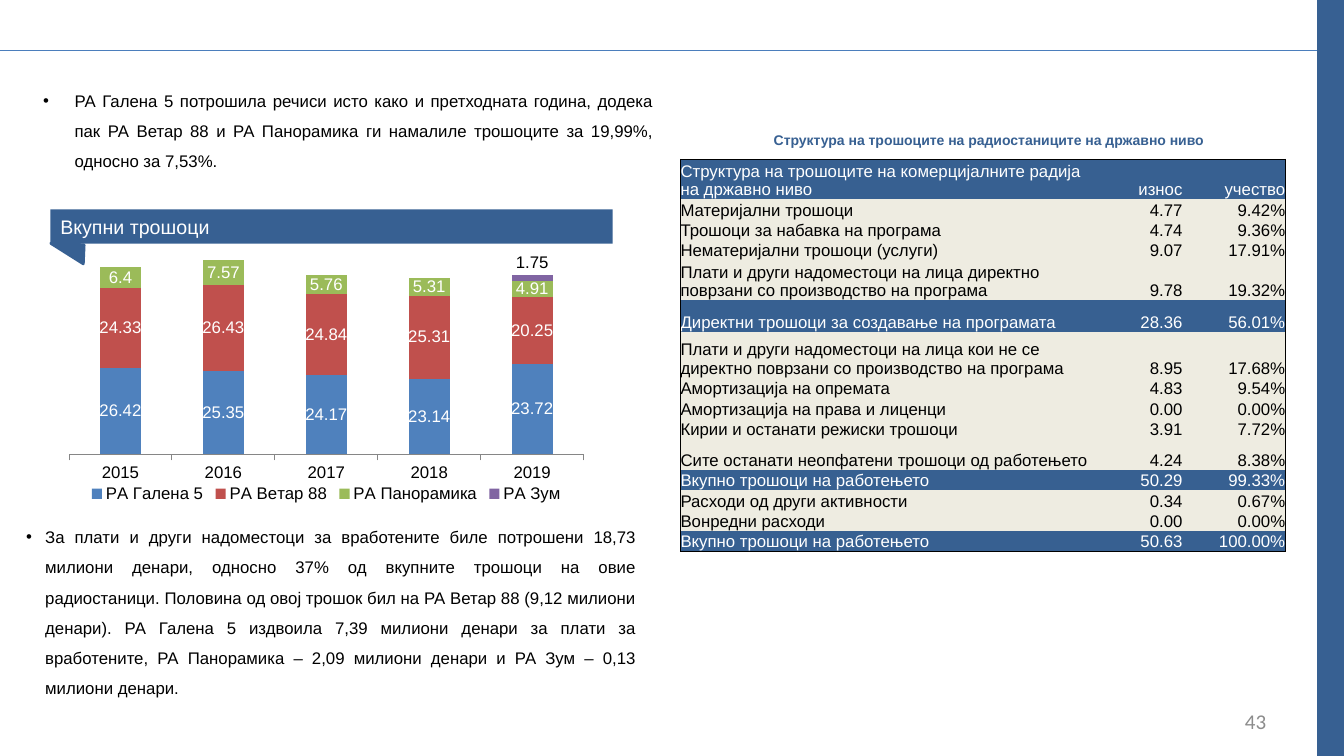
"""Build the slide on the costs of the national radio stations."""
from lxml.etree import SubElement
from pptx import Presentation
from pptx.chart.data import CategoryChartData
from pptx.dml.color import RGBColor
from pptx.enum.chart import XL_CHART_TYPE as ChartType, XL_LABEL_POSITION as LabelPosition
from pptx.enum.chart import XL_LEGEND_POSITION as LegendPosition, XL_TICK_MARK as TickMark
from pptx.enum.chart import XL_TICK_LABEL_POSITION as TickLabelPosition
from pptx.enum.shapes import MSO_CONNECTOR as Connector, MSO_SHAPE as Shape
from pptx.enum.text import MSO_ANCHOR as Anchor, PP_ALIGN as Align
from pptx.oxml import parse_xml
from pptx.oxml.ns import nsdecls, qn
from pptx.util import Cm, Pt

BLACK = RGBColor(0x00, 0x00, 0x00)
WHITE = RGBColor(0xFF, 0xFF, 0xFF)
GRAY = RGBColor(0x8C, 0x8C, 0x8C)
NAVY = RGBColor(0x37, 0x60, 0x92)
TABLE_NAVY = RGBColor(0x37, 0x60, 0x91)
CREAM = RGBColor(0xEE, 0xEC, 0xE1)
RULE_BLUE = RGBColor(0x4B, 0x7E, 0xBC)
AXIS_GRAY = RGBColor(0x86, 0x86, 0x86)
BLUE = RGBColor(0x4F, 0x81, 0xBD)
RED = RGBColor(0xC0, 0x50, 0x4D)
GREEN = RGBColor(0x9B, 0xBB, 0x59)
PURPLE = RGBColor(0x80, 0x64, 0xA2)
PLAIN_TABLE_STYLE = "{2D5ABB26-0587-4C30-8999-92F81FD0307C}"

YEARS = ["2015", "2016", "2017", "2018", "2019"]
STATIONS = [
    ("РА Галена 5", [26.42, 25.35, 24.17, 23.14, 27.72], BLUE),
    ("РА Ветар 88", [24.33, 26.43, 24.84, 25.31, 20.25], RED),
    ("РА Панорамика", [6.4, 7.57, 5.76, 5.31, 4.91], GREEN),
    ("РА Зум", [0, 0, 0, 0, 1.75], PURPLE),
]
COSTS = [
    ("Структура на трошоците на комерцијалните радија на државно ниво", "износ", "учество"),
    ("Материјални трошоци", "4.77", "9.42%"),
    ("Трошоци за набавка на програма", "4.74", "9.36%"),
    ("Нематеријални трошоци (услуги)", "9.07", "17.91%"),
    ("Плати и други надоместоци на лица директно поврзани со производство на програма",
     "9.78", "19.32%"),
    ("Директни трошоци за создавање на програмата", "28.36", "56.01%"),
    ("Плати и други надоместоци на лица кои не се директно поврзани со производство "
     "на програма", "8.95", "17.68%"),
    ("Амортизација на опремата", "4.83", "9.54%"),
    ("Амортизација на права и лиценци", "0.00", "0.00%"),
    ("Кирии и останати режиски трошоци", "3.91", "7.72%"),
    ("Сите останати неопфатени трошоци од работењето", "4.24", "8.38%"),
    ("Вкупно трошоци на работењето", "50.29", "99.33%"),
    ("Расходи од други активности", "0.34", "0.67%"),
    ("Вонредни расходи", "0.00", "0.00%"),
    ("Вкупно трошоци на работењето", "50.63", "100.00%"),
]
TOTAL_ROWS = {0, 5, 11, 14}
TALL_ROWS = {0: 0.97, 4: 0.97, 5: 0.79, 6: 1.17, 10: 0.79}
TREND_TEXT = (
    "РА Галена 5 потрошила речиси исто како и претходната година, додека пак РА Ветар 88 "
    "и РА Панорамика ги намалиле трошоците за 19,99%, односно за 7,53%.")
WAGES_TEXT = (
    "За плати и други надоместоци за вработените биле потрошени 18,73 милиони денари, "
    "односно 37% од вкупните трошоци на овие радиостаници. Половина од овој трошок бил на "
    "РА Ветар 88 (9,12 милиони денари). РА Галена 5 издвоила 7,39 милиони денари за плати "
    "за вработените, РА Панорамика – 2,09 милиони денари и РА Зум – 0,13 милиони денари.")


def manual_layout(**values):
    """Return a chart layout element with the given settings."""
    settings = "".join(f'<c:{name} val="{value}"/>' for name, value in values.items())
    return parse_xml(f'<c:layout {nsdecls("c")}><c:manualLayout>{settings}'
                     '</c:manualLayout></c:layout>')


class SlideBuilder:
    """Holds the text style and the slide, and adds each kind of element."""

    def __init__(self, slide, font="Arial", size=12):
        self.slide, self.font, self.size = slide, font, size

    def style(self, font, color=BLACK, size=None, name=None, bold=False):
        font.name, font.size, font.bold = name or self.font, Pt(size or self.size), bold
        font.color.rgb = color

    def fill_text(self, frame, text, align=Align.LEFT, **style):
        frame.text, frame.word_wrap = text, True
        paragraph = frame.paragraphs[0]
        paragraph.alignment = align
        self.style(paragraph.runs[0].font, **style)
        return paragraph

    def text(self, box, text, anchor=Anchor.TOP, **style):
        frame = self.slide.shapes.add_textbox(*map(Cm, box)).text_frame
        frame.vertical_anchor = anchor
        return self.fill_text(frame, text, **style)

    def bullet(self, box, text, indent):
        paragraph = self.text(box, text, align=Align.JUSTIFY)
        paragraph.line_spacing = 1.5
        properties = paragraph._p.get_or_add_pPr()
        properties.set("marL", str(Cm(indent)))
        properties.set("indent", str(-Cm(indent)))
        SubElement(properties, qn("a:buFont"), typeface="Arial")
        SubElement(properties, qn("a:buChar"), char="•")

    def shape(self, kind, box, outlined=True, rotation=0):
        shape = self.slide.shapes.add_shape(kind, *map(Cm, box))
        shape.shadow.inherit = False
        shape.rotation = rotation
        shape.fill.solid()
        shape.fill.fore_color.rgb = NAVY
        if outlined:
            shape.line.color.rgb, shape.line.width = NAVY, Pt(2)
        else:
            shape.line.fill.background()
        return shape

    def rule(self, y, width):
        line = self.slide.shapes.add_connector(Connector.STRAIGHT, 0, Cm(y), Cm(width), Cm(y))
        line.line.color.rgb, line.line.width = RULE_BLUE, Pt(0.75)
        SubElement(line._element.spPr, qn("a:effectLst"))

    def cost_chart(self, box):
        data = CategoryChartData()
        data.categories = YEARS
        for name, values, _ in STATIONS:
            data.add_series(name, values)
        chart = self.slide.shapes.add_chart(
            ChartType.COLUMN_STACKED, *map(Cm, box), data).chart
        self.style(chart.font)
        chart.has_title = False
        chart.has_legend = True
        chart.legend.position, chart.legend.include_in_layout = LegendPosition.BOTTOM, False
        chart.legend._element.find(qn("c:legendPos")).addnext(manual_layout(
            xMode="edge", yMode="edge", x=0.05, y=0.87, w=0.9, h=0.08))
        plot_area = chart._chartSpace.chart.plotArea
        for layout in plot_area.findall(qn("c:layout")):
            plot_area.remove(layout)
        plot_area.insert(0, manual_layout(
            layoutTarget="inner", xMode="edge", yMode="edge", x=0.02, y=0.13, w=0.96, h=0.65))
        values_axis, years_axis = chart.value_axis, chart.category_axis
        values_axis.visible = values_axis.has_major_gridlines = False
        values_axis.minimum_scale, values_axis.maximum_scale = 0, 60
        years_axis.major_tick_mark = TickMark.OUTSIDE
        years_axis.tick_label_position = TickLabelPosition.LOW
        years_axis.format.line.color.rgb = AXIS_GRAY
        plot = chart.plots[0]
        plot.gap_width, plot.overlap, plot.vary_by_categories = 150, 100, False
        for series, (_, _, color) in zip(plot.series, STATIONS):
            series.format.fill.solid()
            series.format.fill.fore_color.rgb = color
            series.data_labels.show_value = color != PURPLE
            self.style(series.data_labels.font, BLACK if color == PURPLE else WHITE)
        corrected = plot.series[0].points[4].data_label
        self.fill_text(corrected.text_frame, "23.72", align=Align.CENTER, color=WHITE)
        raised = plot.series[3].points[4].data_label
        raised.position = LabelPosition.CENTER
        self.style(raised.font)
        raised._dLbl.find(qn("c:idx")).addnext(manual_layout(x=0, y=-0.05))

    def cost_table(self, left, top, widths):
        heights = [TALL_ROWS.get(row, 0.48) for row in range(len(COSTS))]
        frame = self.slide.shapes.add_table(
            len(COSTS), len(widths), Cm(left), Cm(top), Cm(sum(widths)), Cm(sum(heights)))
        table = frame.table
        table._tbl.tblPr.find(qn("a:tableStyleId")).text = PLAIN_TABLE_STYLE
        for column, width in zip(table.columns, widths):
            column.width = Cm(width)
        for row, (height, texts) in enumerate(zip(heights, COSTS)):
            table.rows[row].height = Cm(height)
            for column, text in enumerate(texts):
                edges = {"lnL": column == 0, "lnR": column == len(widths) - 1,
                         "lnT": row == 0, "lnB": row == len(COSTS) - 1}
                self.cell(table.cell(row, column), text, row in TOTAL_ROWS, column > 0,
                          [edge for edge, outer in edges.items() if outer])

    def cell(self, cell, text, is_total, is_number, edges):
        cell.margin_left = cell.margin_right = cell.margin_top = cell.margin_bottom = 0
        cell.vertical_anchor = Anchor.BOTTOM
        for edge in edges:
            cell._tc.get_or_add_tcPr().append(parse_xml(
                f'<a:{edge} {nsdecls("a")} w="{Pt(0.5)}"><a:solidFill>'
                f'<a:srgbClr val="{BLACK}"/></a:solidFill></a:{edge}>'))
        cell.fill.solid()
        cell.fill.fore_color.rgb = TABLE_NAVY if is_total else CREAM
        self.fill_text(cell.text_frame, text, align=Align.RIGHT if is_number else Align.LEFT,
                       color=WHITE if is_total else BLACK)


def main():
    presentation = Presentation()
    presentation.slide_width, presentation.slide_height = Cm(33.87), Cm(19.05)
    builder = SlideBuilder(presentation.slides.add_slide(presentation.slide_layouts[6]))
    builder.text((30.89, 17.65, 1.27, 1.02), "43", anchor=Anchor.MIDDLE, align=Align.RIGHT,
                 color=GRAY, size=15, name="Calibri")
    builder.rule(1.27, 33.87)
    builder.shape(Shape.RECTANGLE, (33.22, 0, 0.64, 19.05))
    builder.bullet((0.84, 1.9, 15.88, 2.46), TREND_TEXT, 0.79)
    builder.cost_chart((1.47, 5.51, 13.51, 7.62))
    banner = builder.shape(Shape.RECTANGLE, (1.27, 5.28, 14.17, 0.86), outlined=False)
    builder.fill_text(banner.text_frame, "Вкупни трошоци", color=WHITE, size=14)
    builder.shape(Shape.RIGHT_TRIANGLE, (1.27, 6.15, 0.84, 0.48), rotation=182.5)
    builder.cost_table(17.15, 4.01, (10.54, 2.11, 2.59))
    builder.bullet((0.41, 12.9, 15.88, 4.78), WAGES_TEXT, 0.48)
    builder.text((19.25, 3.2, 11.84, 0.69),
                 "Структура на трошоците на радиостаниците на државно ниво",
                 color=NAVY, size=10, bold=True)
    presentation.save("out.pptx")


if __name__ == "__main__":
    main()
